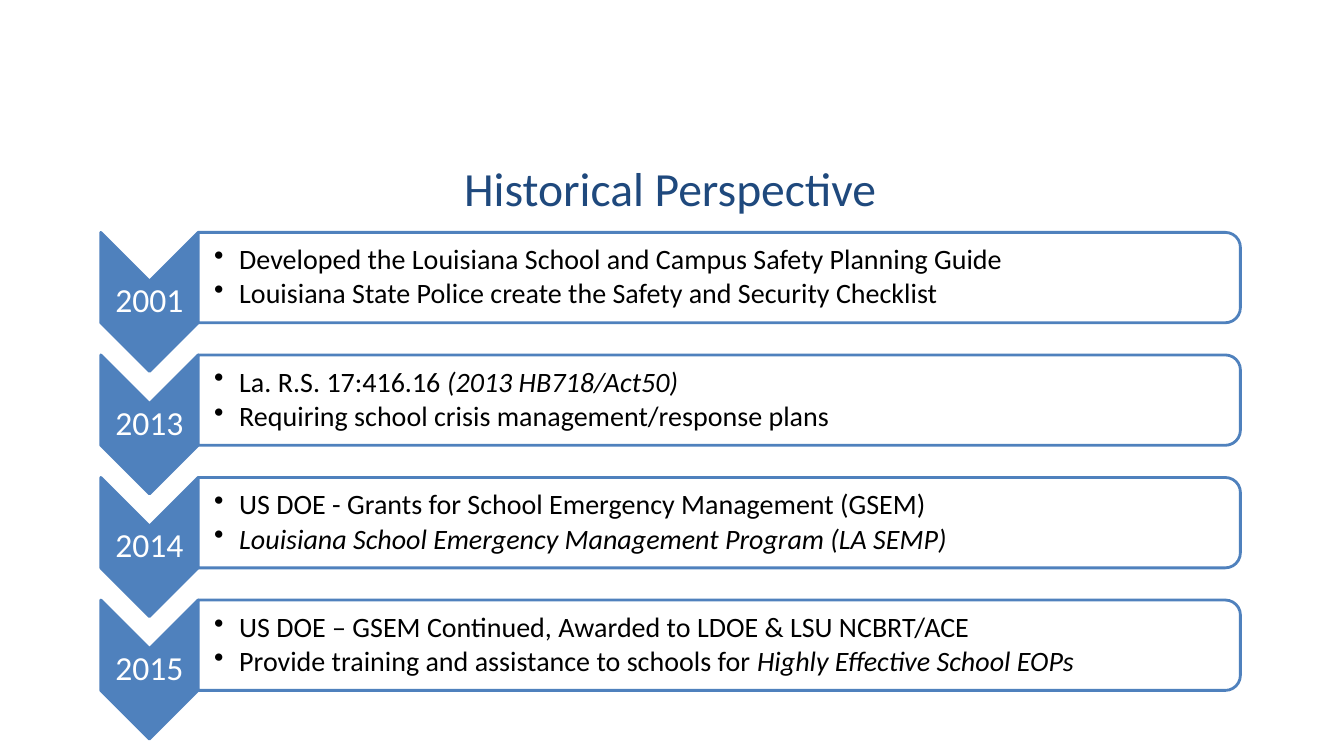
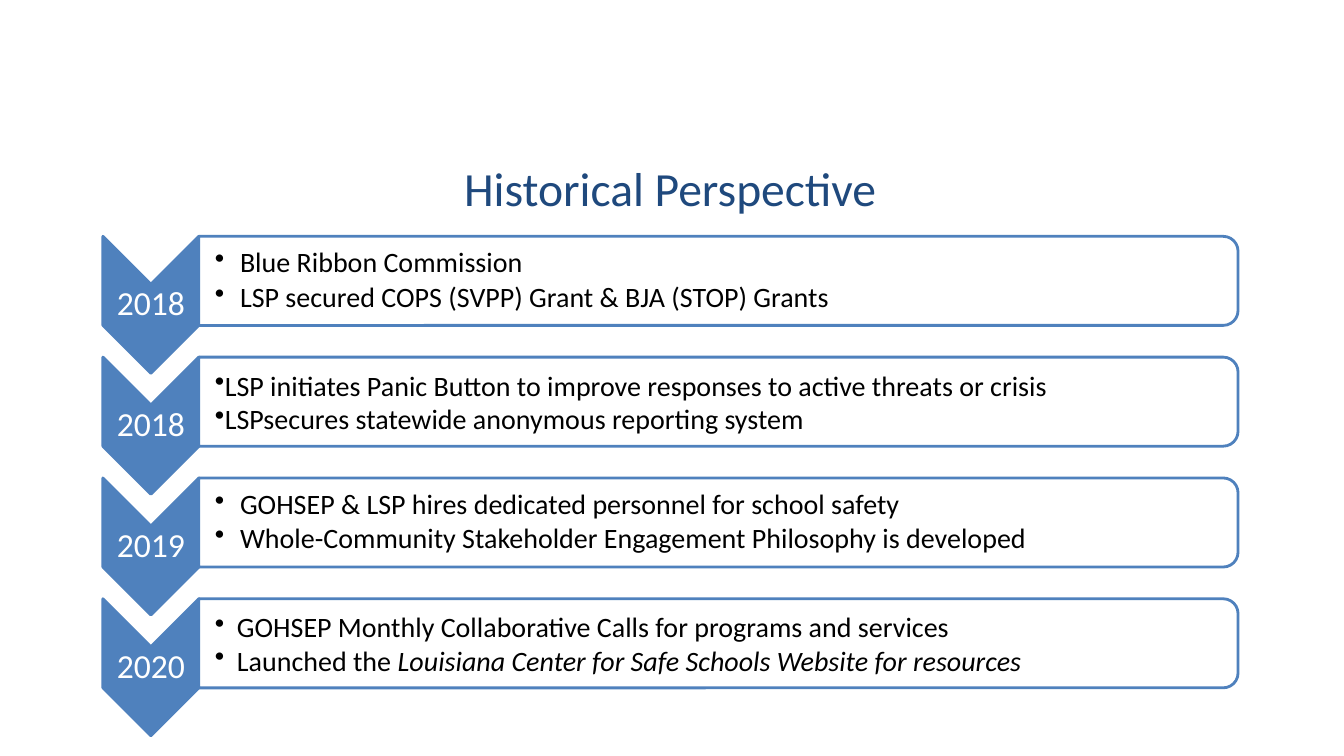
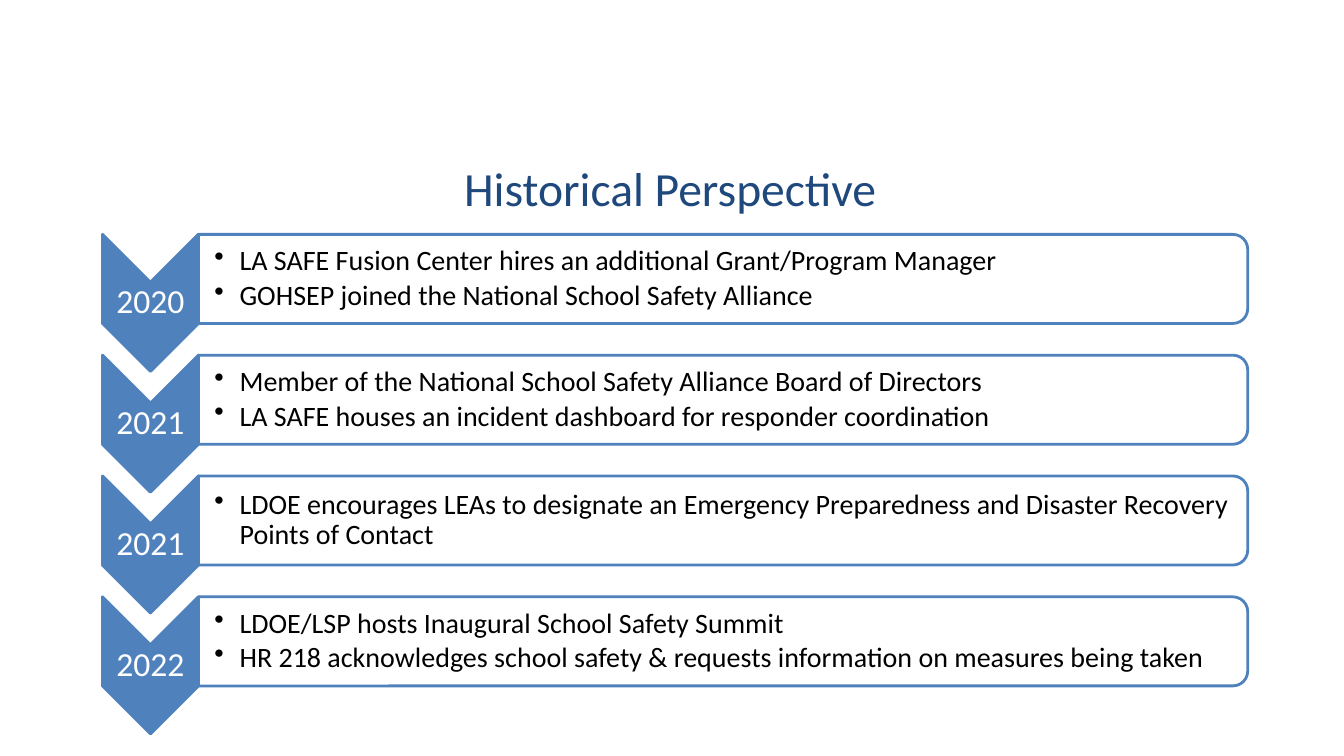
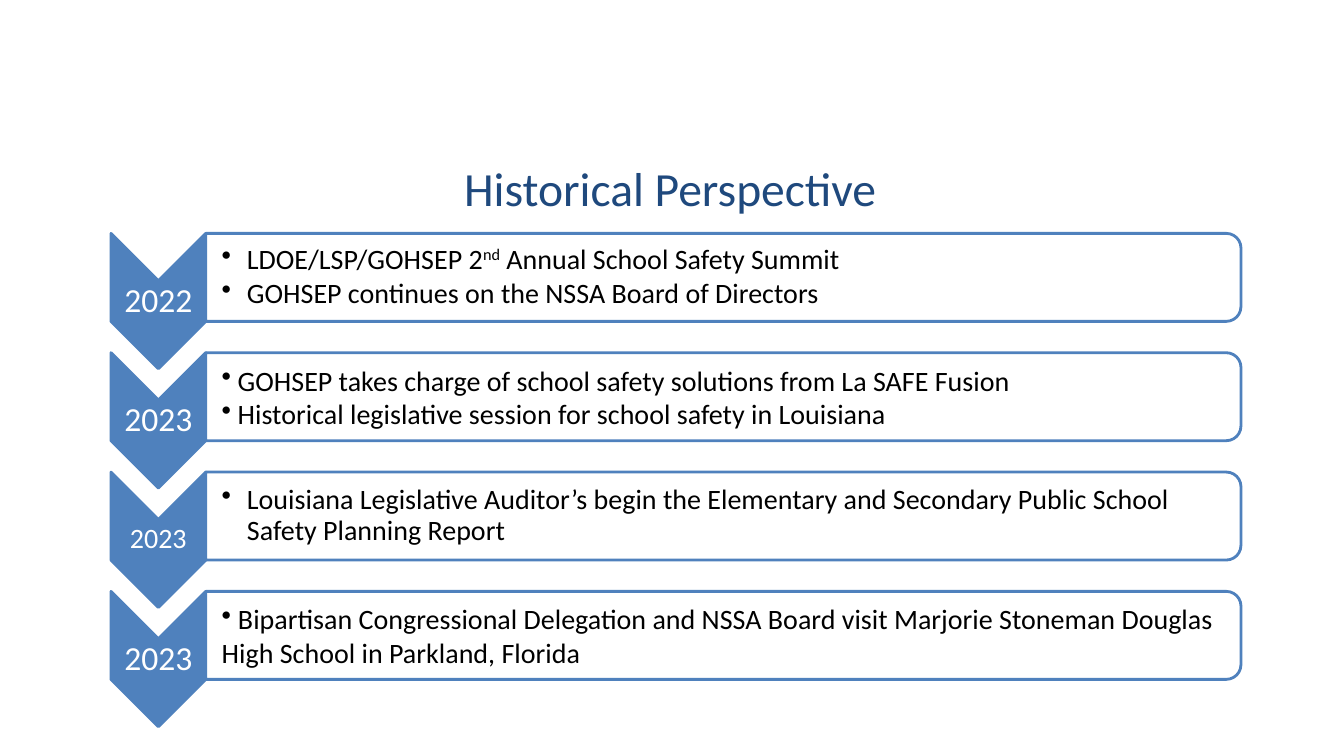
from lxml import etree
from pptx import Presentation
from pptx.dml.color import RGBColor
from pptx.enum.shapes import MSO_SHAPE
from pptx.enum.text import MSO_ANCHOR, MSO_AUTO_SIZE, PP_ALIGN
from pptx.oxml.ns import qn
from pptx.util import Pt

CHEVRON = MSO_SHAPE.CHEVRON
ROUNDED_BAR = MSO_SHAPE.ROUND_2_SAME_RECTANGLE
MIDDLE = MSO_ANCHOR.MIDDLE
CENTER = PP_ALIGN.CENTER
LEFT = PP_ALIGN.LEFT
NO_AUTOFIT = MSO_AUTO_SIZE.NONE

FONT = "Calibri"
NAVY, BLUE, WHITE, BLACK = "1F497D", "4F81BD", "FFFFFF", "000000"
TITLE = "Historical Perspective"
ITALIC = {"italic": True}
SUPER = {"superscript": True}

# Proportions of a timeline row, relative to the chevron height
CHEVRON_WIDTH, BAR_HEIGHT, ROW_PITCH = 0.7, 0.65, 0.8815

# Bullet styles: hanging width in points, line spacing, gap between items
HANGING = {"hang": 18, "line": 0.9, "gap": 3}
TIGHT = {"hang": 0, "line": 1, "gap": 0}
NARROW = {"hang": 11.4, "line": 1, "gap": 0}
MEDIUM = {"hang": 15.8, "line": 1, "gap": 0}

# Each slide: place and size in points, then rows of year, items, options.
# An item is a string or a list of strings and (string, format) pairs.
SLIDES = [
    {"left": 72, "top": 166, "height": 99.3, "bar_width": 744.5, "rows": [
        ("2001", ["Developed the Louisiana School and Campus Safety Planning Guide",
                  "Louisiana State Police create the Safety and Security Checklist"], {}),
        ("2013", [["La. R.S. 17:416.16 ", ("(2013 HB718/Act50)", ITALIC)],
                  "Requiring school crisis management/response plans"], {}),
        ("2014", ["US DOE - Grants for School Emergency Management (GSEM)",
                  [("Louisiana School Emergency Management Program (LA SEMP)", ITALIC)]], {}),
        ("2015", ["US DOE – GSEM Continued, Awarded to LDOE & LSU NCBRT/ACE",
                  ["Provide training and assistance to schools for ",
                   ("Highly Effective School EOPs", ITALIC)]], {}),
    ]},
    {"left": 73.5, "top": 168.8, "height": 97.9, "bar_width": 742.3, "rows": [
        ("2018", ["Blue Ribbon Commission",
                  "LSP secured COPS (SVPP) Grant & BJA (STOP) Grants"], {}),
        ("2018", ["LSP initiates Panic Button to improve responses to active threats or crisis",
                  "LSPsecures statewide anonymous reporting system"], {"style": TIGHT}),
        ("2019", ["GOHSEP & LSP hires dedicated personnel for school safety",
                  "Whole-Community Stakeholder Engagement Philosophy is developed"], {}),
        ("2020", ["GOHSEP Monthly Collaborative Calls for programs and services",
                  ["Launched the ",
                   ("Louisiana Center for Safe Schools Website for resources", ITALIC)]],
         {"style": MEDIUM}),
    ]},
    {"left": 73.2, "top": 167.4, "height": 97.9, "bar_width": 749.5, "rows": [
        ("2020", ["LA SAFE Fusion Center hires an additional Grant/Program Manager",
                  "GOHSEP joined the National School Safety Alliance"], {}),
        ("2021", ["Member of the National School Safety Alliance Board of Directors",
                  "LA SAFE houses an incident dashboard for responder coordination"], {}),
        ("2021", ["LDOE encourages LEAs to designate an Emergency Preparedness and "
                  "Disaster Recovery Points of Contact"], {}),
        ("2022", ["LDOE/LSP hosts Inaugural School Safety Summit",
                  "HR 218 acknowledges school safety & requests information on "
                  "measures being taken"], {}),
    ]},
    {"left": 79.3, "top": 166.7, "height": 96.7, "bar_width": 739.4, "rows": [
        ("2022", [["LDOE/LSP/GOHSEP 2", ("nd", SUPER), " Annual School Safety Summit"],
                  "GOHSEP continues on the NSSA Board of Directors"], {}),
        ("2023", ["GOHSEP takes charge of school safety solutions from La SAFE Fusion",
                  "Historical legislative session for school safety in Louisiana"],
         {"style": NARROW}),
        ("2023", ["Louisiana Legislative Auditor’s begin the Elementary and Secondary "
                  "Public School Safety Planning Report"], {"year_size": 20}),
        ("2023", [" Bipartisan Congressional Delegation and NSSA Board visit Marjorie "
                  "Stoneman Douglas High School in Parkland, Florida"], {"style": TIGHT}),
    ]},
]


def rgb(value):
    return RGBColor.from_string(value)


def add_run(p, text, size, color, italic=False, superscript=False):
    r = p.add_run()
    r.text = text
    font = r.font
    font.name, font.size, font.color.rgb = FONT, Pt(size), rgb(color)
    if italic:
        font.italic = True
    if superscript:
        r._r.get_or_add_rPr().set("baseline", "30000")


def add_bullet(p, hang):
    pPr = p._p.get_or_add_pPr()
    pPr.set("marL", str(Pt(hang)))
    pPr.set("indent", str(-Pt(hang)))
    etree.SubElement(pPr, qn("a:buChar")).set("char", "•")


def write_text(tf, items, size, color, align=LEFT, line=None, gap=0, hang=None):
    """Write one paragraph per item; a hang width turns on bullets."""
    for i, item in enumerate(items):
        p = tf.add_paragraph() if i else tf.paragraphs[0]
        if hang is not None:
            add_bullet(p, hang)
        p.alignment = align
        if line:
            p.line_spacing = line
        if i and gap:
            p.space_before = Pt(gap)
        for piece in [item] if isinstance(item, str) else item:
            text, fmt = (piece, {}) if isinstance(piece, str) else piece
            add_run(p, text, size, color, **fmt)


def add_text_box(slide, x, y, w, h, items, inset=1, left_inset=1, **fmt):
    tf = slide.shapes.add_textbox(Pt(x), Pt(y), Pt(w), Pt(h)).text_frame
    tf.word_wrap = True
    tf.vertical_anchor = MIDDLE
    tf.margin_left = Pt(left_inset)
    tf.margin_top = tf.margin_right = tf.margin_bottom = Pt(inset)
    write_text(tf, items, **fmt)


def add_turned_shape(slide, kind, x, y, w, h, fill):
    """Add a shape turned by 90 degrees that covers the given area."""
    sp = slide.shapes.add_shape(kind, Pt(x + (w - h) / 2), Pt(y + (h - w) / 2), Pt(h), Pt(w))
    sp.rotation = 90
    sp.shadow.inherit = False
    sp.fill.solid()
    sp.fill.fore_color.rgb = rgb(fill)
    sp.line.color.rgb = rgb(BLUE)
    sp.line.width = Pt(2)


def add_title(slide):
    sp = slide.shapes.title
    sp.left, sp.top, sp.width, sp.height = Pt(46.8), Pt(108.7), Pt(864), Pt(50.4)
    tf = sp.text_frame
    tf.auto_size = NO_AUTOFIT
    tf.vertical_anchor = MIDDLE
    write_text(tf, [TITLE], size=34, color=NAVY, align=CENTER)


def add_row(slide, x, y, height, bar_width, year, items, style=HANGING, year_size=24):
    width, bar_height = height * CHEVRON_WIDTH, height * BAR_HEIGHT
    bar_x = x + width
    add_turned_shape(slide, CHEVRON, x, y, width, height, BLUE)
    add_text_box(slide, x, y + width / 2, width, height - width, [year],
                 size=year_size, color=WHITE, align=CENTER, line=0.9)
    add_turned_shape(slide, ROUNDED_BAR, bar_x, y, bar_width, bar_height, WHITE)
    add_text_box(slide, bar_x, y + 3, bar_width - 3, bar_height - 6, items,
                 left_inset=11.4, size=20, color=BLACK, **style)


def add_timeline(slide, left, top, height, bar_width, rows):
    for i, (year, items, options) in enumerate(rows):
        y = top + i * height * ROW_PITCH
        add_row(slide, left, y, height, bar_width, year, items, **options)


def main():
    prs = Presentation()
    prs.slide_width, prs.slide_height = Pt(960), Pt(540)
    for timeline in SLIDES:
        slide = prs.slides.add_slide(prs.slide_layouts[5])
        add_title(slide)
        add_timeline(slide, **timeline)
    prs.save("out.pptx")


if __name__ == "__main__":
    main()
